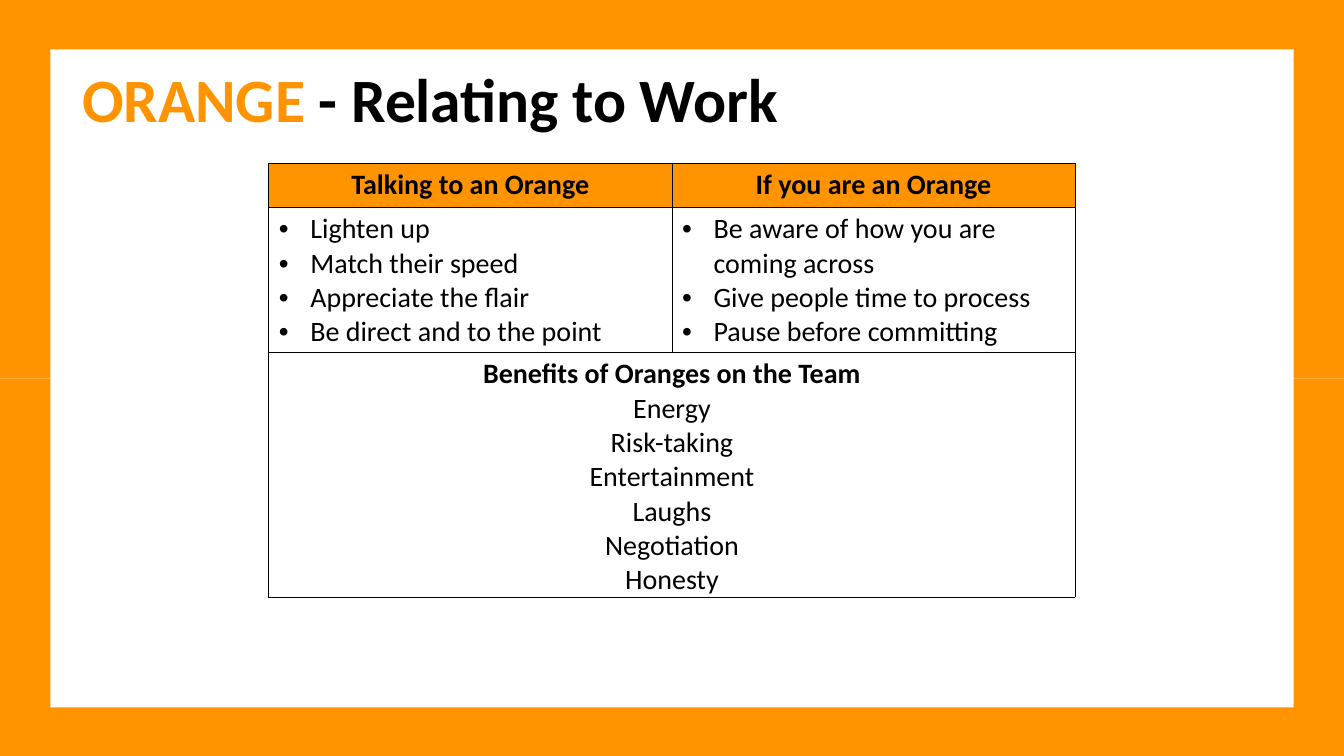
from dataclasses import dataclass

from lxml import etree
from pptx import Presentation
from pptx.dml.color import RGBColor
from pptx.enum.shapes import MSO_SHAPE
from pptx.enum.text import MSO_ANCHOR, PP_ALIGN
from pptx.oxml.ns import qn
from pptx.util import Pt

RECTANGLE = MSO_SHAPE.RECTANGLE
TOP = MSO_ANCHOR.TOP
CENTER, LEFT = PP_ALIGN.CENTER, PP_ALIGN.LEFT
BLANK_LAYOUT = 6
SLIDE_WIDTH, SLIDE_HEIGHT = 960, 540


@dataclass(frozen=True)
class Theme:
    orange: RGBColor = RGBColor(0xFF, 0x93, 0x00)
    black: RGBColor = RGBColor(0, 0, 0)
    font: str = "Calibri"
    title_size: int = 44
    table_size: int = 20
    border_width: float = 0.5
    bullet_indent: float = 22.5


THEME = Theme()

HEADERS = ["Talking to an Orange", "If you are an Orange"]
ADVICE = [
    ["Lighten up", "Match their speed", "Appreciate the flair",
     "Be direct and to the point"],
    ["Be aware of how you are coming across", "Give people time to process",
     "Pause before committing"],
]
BENEFITS = ["Benefits of Oranges on the Team", "Energy", "Risk-taking",
            "Entertainment", "Laughs", "Negotiation", "Honesty"]
ROW_HEIGHTS = [31.4, 103.6, 175]


def apply_format(target, values):
    for name, value in values.items():
        setattr(target, name, value)


def add_run(paragraph, text, size, color, bold):
    run = paragraph.add_run()
    run.text = text
    apply_format(run.font, {"name": THEME.font, "size": Pt(size), "bold": bold})
    run.font.color.rgb = color
    return run


def add_title(slide, left, top, width, height):
    text_box = slide.shapes.add_textbox(Pt(left), Pt(top), Pt(width), Pt(height))
    frame = text_box.text_frame
    apply_format(frame, {
        "word_wrap": True, "vertical_anchor": TOP, "margin_left": Pt(10.8),
        "margin_right": 0, "margin_top": Pt(0.9), "margin_bottom": 0,
    })
    paragraph = frame.paragraphs[0]
    paragraph.space_before = Pt(1.1)
    for text, color in (("ORANGE ", THEME.orange),
                        ("- Relating to Work", THEME.black)):
        run = add_run(paragraph, text, THEME.title_size, color, True)
        run.font._element.set("spc", "-10")


def add_bullet(paragraph):
    indent = Pt(THEME.bullet_indent)
    properties = paragraph._p.get_or_add_pPr()
    properties.set("marL", str(indent))
    properties.set("indent", str(-indent))
    font = etree.SubElement(properties, qn("a:buFont"))
    font.set("typeface", "Arial")
    etree.SubElement(properties, qn("a:buChar")).set("char", "•")


def add_borders(cell):
    properties = cell._tc.get_or_add_tcPr()
    for position, side in enumerate(("a:lnL", "a:lnR", "a:lnT", "a:lnB")):
        line = etree.Element(qn(side), w=str(Pt(THEME.border_width)))
        fill = etree.SubElement(line, qn("a:solidFill"))
        etree.SubElement(fill, qn("a:srgbClr")).set("val", str(THEME.black))
        properties.insert(position, line)


def fill_cell(cell, lines, bold_first=False, bulleted=False):
    apply_format(cell, {"margin_top": Pt(3.6), "margin_bottom": 0,
                        "vertical_anchor": TOP})
    frame = cell.text_frame
    for index, text in enumerate(lines):
        paragraph = frame.add_paragraph() if index else frame.paragraphs[0]
        paragraph.alignment = LEFT if bulleted else CENTER
        if bulleted:
            add_bullet(paragraph)
        add_run(paragraph, text, THEME.table_size, THEME.black,
                bold_first and index == 0)


def add_work_table(slide, left, top, width):
    table = slide.shapes.add_table(
        len(ROW_HEIGHTS), len(HEADERS), Pt(left), Pt(top), Pt(width),
        Pt(sum(ROW_HEIGHTS))).table
    apply_format(table, {"first_row": False, "horz_banding": False})
    for row, height in zip(table.rows, ROW_HEIGHTS):
        row.height = Pt(height)

    # Plain cells with thin borders
    for cell in table.iter_cells():
        cell.fill.background()
        add_borders(cell)

    # Headings and advice, column by column
    for column, (header, advice) in enumerate(zip(HEADERS, ADVICE)):
        heading = table.cell(0, column)
        heading.fill.solid()
        heading.fill.fore_color.rgb = THEME.orange
        fill_cell(heading, [header], bold_first=True)
        fill_cell(table.cell(1, column), advice, bulleted=True)

    # Benefits across both columns
    benefits = table.cell(2, 0)
    benefits.merge(table.cell(2, 1))
    fill_cell(benefits, BENEFITS, bold_first=True)


def add_frame(slide, left, top, width, height, thickness):
    group = slide.shapes.add_group_shape()
    half_width, half_height = width / 2, height / 2
    right, bottom = left + width - thickness, top + height - thickness
    bars = []
    # Each side is made of two half-length bars
    for half in range(2):
        x, y = left + half * half_width, top + half * half_height
        bars += [(x, edge, half_width, thickness) for edge in (top, bottom)]
        bars += [(edge, y, thickness, half_height) for edge in (left, right)]
    for bar in bars:
        shape = group.shapes.add_shape(RECTANGLE, *(Pt(value) for value in bar))
        shape.shadow.inherit = False
        shape.fill.solid()
        shape.fill.fore_color.rgb = THEME.orange
        shape.line.fill.background()


def main():
    presentation = Presentation()
    apply_format(presentation, {"slide_width": Pt(SLIDE_WIDTH),
                                "slide_height": Pt(SLIDE_HEIGHT)})
    slide = presentation.slides.add_slide(
        presentation.slide_layouts[BLANK_LAYOUT])
    add_title(slide, 48, 42.5, 864, 54.7)
    add_work_table(slide, 192, 116.6, 576)
    add_frame(slide, 0, -0.7, SLIDE_WIDTH, SLIDE_HEIGHT + 2, 36)
    presentation.save("out.pptx")


if __name__ == "__main__":
    main()
